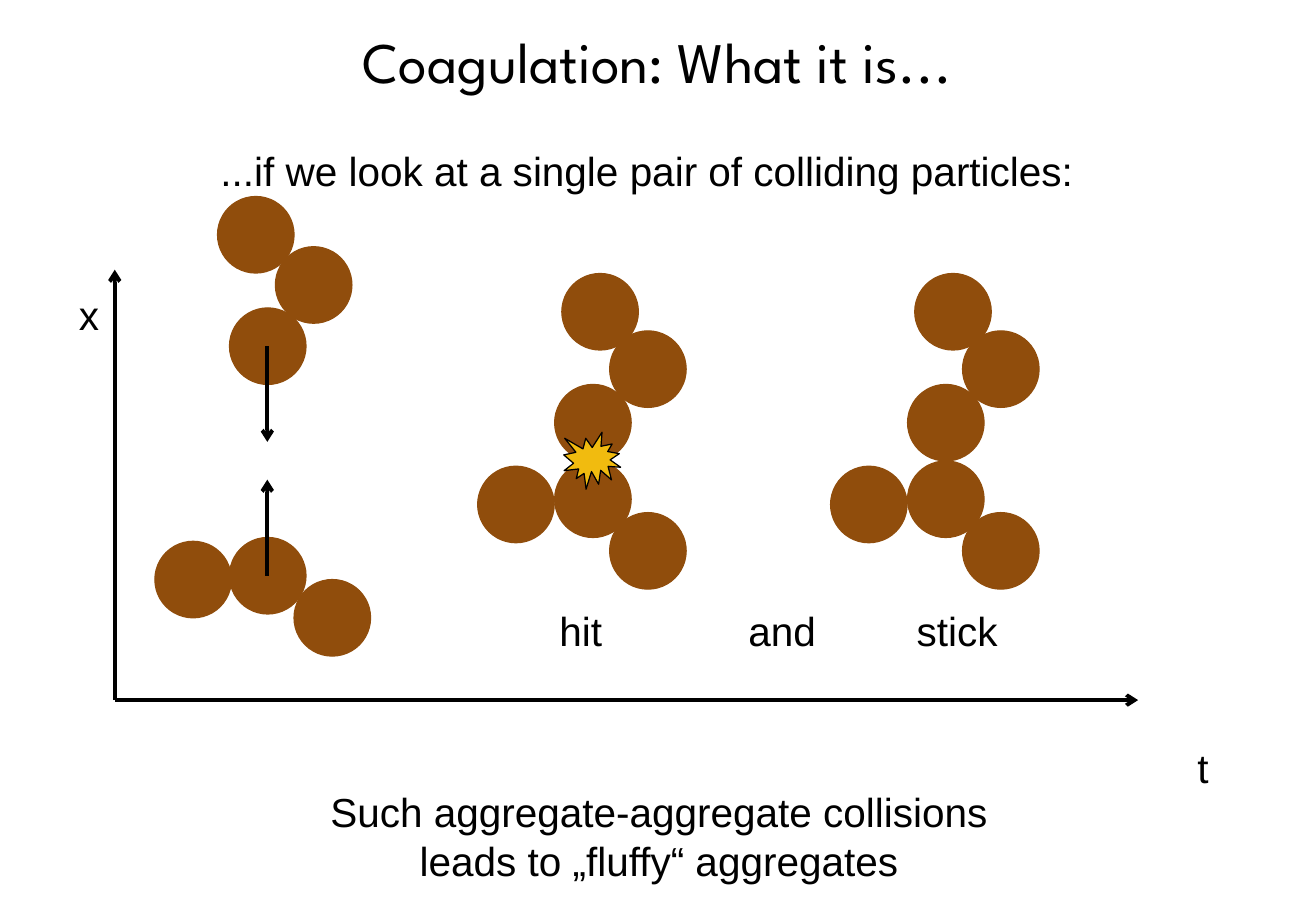
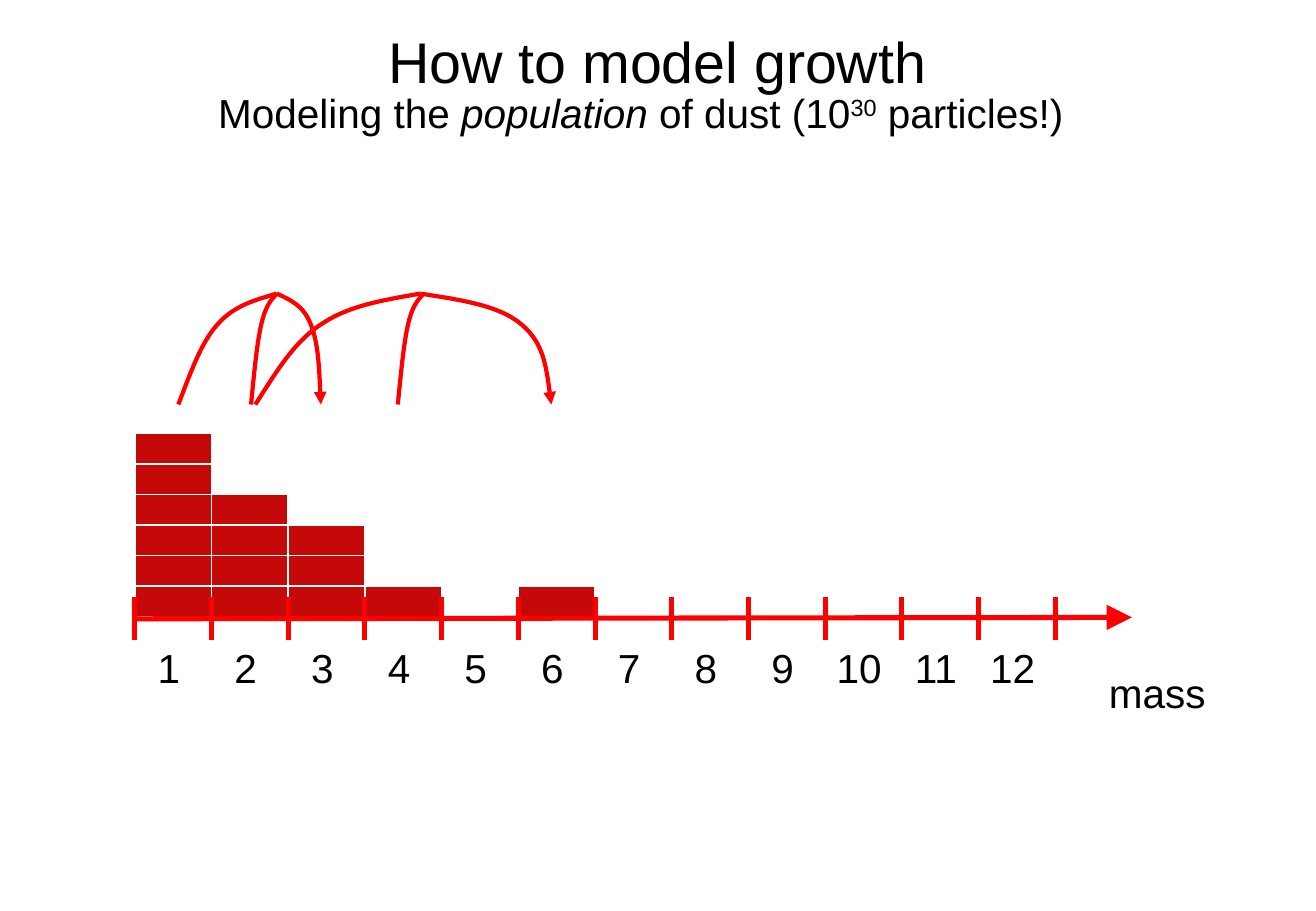
from lxml import etree
from pptx import Presentation
from pptx.dml.color import RGBColor
from pptx.enum.shapes import MSO_CONNECTOR, MSO_SHAPE
from pptx.enum.text import MSO_ANCHOR, PP_ALIGN
from pptx.oxml.ns import qn
from pptx.util import Cm, Pt

STRAIGHT = MSO_CONNECTOR.STRAIGHT
OVAL, RECT, BURST = MSO_SHAPE.OVAL, MSO_SHAPE.RECTANGLE, MSO_SHAPE.EXPLOSION1
LEFT, CENTER = PP_ALIGN.LEFT, PP_ALIGN.CENTER
rgb = RGBColor.from_string

BLACK, WHITE = "000000", "FFFFFF"
DUST, FLASH = "904D0C", "F1BB0F"
BRICK, RED = "C50808", "FF0000"


def add_text(s, lines, x, y, w, align=LEFT):
    """Add a text box; each line is a list of run texts."""
    tf = s.shapes.add_textbox(Cm(x), Cm(y), Cm(w), Cm(1.27 * len(lines))).text_frame
    tf.word_wrap = True
    for i, runs in enumerate(lines):
        p = tf.add_paragraph() if i else tf.paragraphs[0]
        p.alignment = align
        for text in runs:
            r = p.add_run()
            r.text = text
            r.font.name, r.font.size = "Arial", Pt(24)
            r.font.color.rgb = rgb(BLACK)
    return tf


def stroke(shape, color, width, head=None, head_size="med"):
    """Set the outline, drop the shadow and add an arrowhead at the end."""
    shape.line.color.rgb = rgb(color)
    shape.line.width = Pt(width)
    spPr = shape._element.spPr
    etree.SubElement(spPr, qn("a:effectLst"))
    if head:
        etree.SubElement(spPr.find(qn("a:ln")), qn("a:tailEnd"),
                         type=head, w=head_size, len=head_size)


prs = Presentation()
prs.slide_width, prs.slide_height = Cm(27.52), Cm(19.05)

# Shared title position on the layout, then one slide per title
layout = prs.slide_layouts[5]
title = layout.placeholders[0]
title.left, title.top, title.width, title.height = Cm(0.91), Cm(0.42), Cm(25.68), Cm(1.7)
title.text_frame.vertical_anchor = MSO_ANCHOR.MIDDLE

slides = []
for text, font in (("Coagulation: What it is...", "League Spartan"),
                   ("How to model growth", "Arial")):
    s = prs.slides.add_slide(layout)
    p = s.shapes.title.text_frame.paragraphs[0]
    p.alignment = CENTER
    r = p.add_run()
    r.text = text
    r.font.name, r.font.size = font, Pt(34)
    r.font.color.rgb = rgb(BLACK)
    slides.append(s)
collision, growth = slides

# Slide 1: particles before the collision, at the hit and stuck together
GRAIN = 1.6
STICK_SHIFT = 7.38
before = [(4.55, 4.11), (5.76, 5.16), (4.8, 6.44),
          (3.24, 11.32), (4.8, 11.24), (6.15, 12.12)]
hit = [(11.75, 5.72), (12.75, 6.92), (11.6, 8.04),
       (11.6, 9.64), (9.99, 9.75), (12.75, 10.72)]
stick = [(x + STICK_SHIFT, y) for x, y in hit]
for x, y in before + hit + stick:
    grain = collision.shapes.add_shape(OVAL, Cm(x), Cm(y), Cm(GRAIN), Cm(GRAIN))
    grain.fill.solid()
    grain.fill.fore_color.rgb = rgb(DUST)
    stroke(grain, DUST, 0.75)

burst = collision.shapes.add_shape(BURST, Cm(11.79), Cm(9.04), Cm(1.19), Cm(1.19))
burst.fill.solid()
burst.fill.fore_color.rgb = rgb(FLASH)
stroke(burst, BLACK, 0.75)

for x1, y1, x2, y2 in ((2.4, 14.64, 2.4, 5.64), (2.4, 14.64, 23.8, 14.64),
                       (5.59, 7.24, 5.59, 9.24), (5.59, 12.04, 5.59, 10.03)):
    arrow = collision.shapes.add_connector(STRAIGHT, Cm(x1), Cm(y1), Cm(x2), Cm(y2))
    stroke(arrow, BLACK, 2.25, "arrow")

for text, x, y, w in (("...if we look at a single pair of colliding particles:", 4.36, 2.92, 19),
                      ("x", 1.4, 5.95, 1), ("t", 24.79, 15.42, 1),
                      ("hit", 11.45, 12.55, 2), ("and", 15.4, 12.55, 2.5),
                      ("stick", 18.92, 12.55, 3)):
    add_text(collision, [[text]], x, y, w)
add_text(collision, [["Such aggregate-aggregate collisions"], ["leads to „fluffy“ aggregates"]],
         6.08, 16.34, 15.4, CENTER)

# Slide 2: histogram of masses
tf = add_text(growth, [["Modeling the ", "population", " of dust (10", "30", " particles!)"]],
              3.4, 1.72, 20, CENTER)
runs = tf.paragraphs[0].runs
runs[1].font.italic = True
runs[3]._r.get_or_add_rPr().set("baseline", "30000")

BINS = 12
AXIS_X, BASE_Y = 2.82, 12.9
BIN_W, BRICK_H = 19.25 / BINS, 0.64
for i, count in enumerate((6, 4, 3, 1, 0, 1)):
    for level in range(1, count + 1):
        brick = growth.shapes.add_shape(RECT, Cm(AXIS_X + i * BIN_W), Cm(BASE_Y - level * BRICK_H),
                                        Cm(BIN_W), Cm(BRICK_H))
        brick.fill.solid()
        brick.fill.fore_color.rgb = rgb(BRICK)
        stroke(brick, WHITE, 1)

for i in range(BINS + 1):
    x = AXIS_X + i * BIN_W
    tick = growth.shapes.add_connector(STRAIGHT, Cm(x), Cm(12.49), Cm(x), Cm(13.38))
    stroke(tick, RED, 3)
    if i < BINS:
        add_text(growth, [[str(i + 1)]], x - 0.09, 13.33, BIN_W, CENTER)
axis = growth.shapes.add_connector(STRAIGHT, Cm(AXIS_X), Cm(12.94), Cm(23.67), Cm(12.91))
stroke(axis, RED, 3, "triangle", "lg")
add_text(growth, [["mass"]], 22.94, 13.85, 3.2)

# Two masses merge into one: Bezier points as fractions of each arc's width
HEIGHTS = (8.46, 7.82, 7.16, 6.78, 6.38, 6.27, 6.14)
RISE = (0, 0.12, 0.23, 0.4, 0.57, 0.79, 1)
FALL = (0, 0.3, 0.6, 0.77, 0.94, 0.97, 1)
for x1, x2, falls in ((3.73, 5.79, False), (5.25, 5.79, False), (5.79, 6.71, True),
                      (5.34, 8.79, False), (8.32, 8.86, False), (8.79, 11.53, True)):
    xs = [x1 + f * (x2 - x1) for f in (FALL if falls else RISE)]
    ys = HEIGHTS[::-1] if falls else HEIGHTS
    points = [(Cm(x), Cm(y)) for x, y in zip(xs, ys)]
    builder = growth.shapes.build_freeform(*points[0])
    builder.add_line_segments(points[1:], close=False)
    arc = builder.convert_to_shape()
    arc.fill.background()
    stroke(arc, RED, 2.5, "triangle" if falls else None)
    # Turn each three line segments into one Bezier segment
    outline = next(arc._element.iter(qn("a:path")))
    segments = outline.findall(qn("a:lnTo"))
    for k in range(0, len(segments), 3):
        curve = etree.SubElement(outline, qn("a:cubicBezTo"))
        for segment in segments[k:k + 3]:
            curve.append(segment[0])
            outline.remove(segment)

prs.save("out.pptx")
